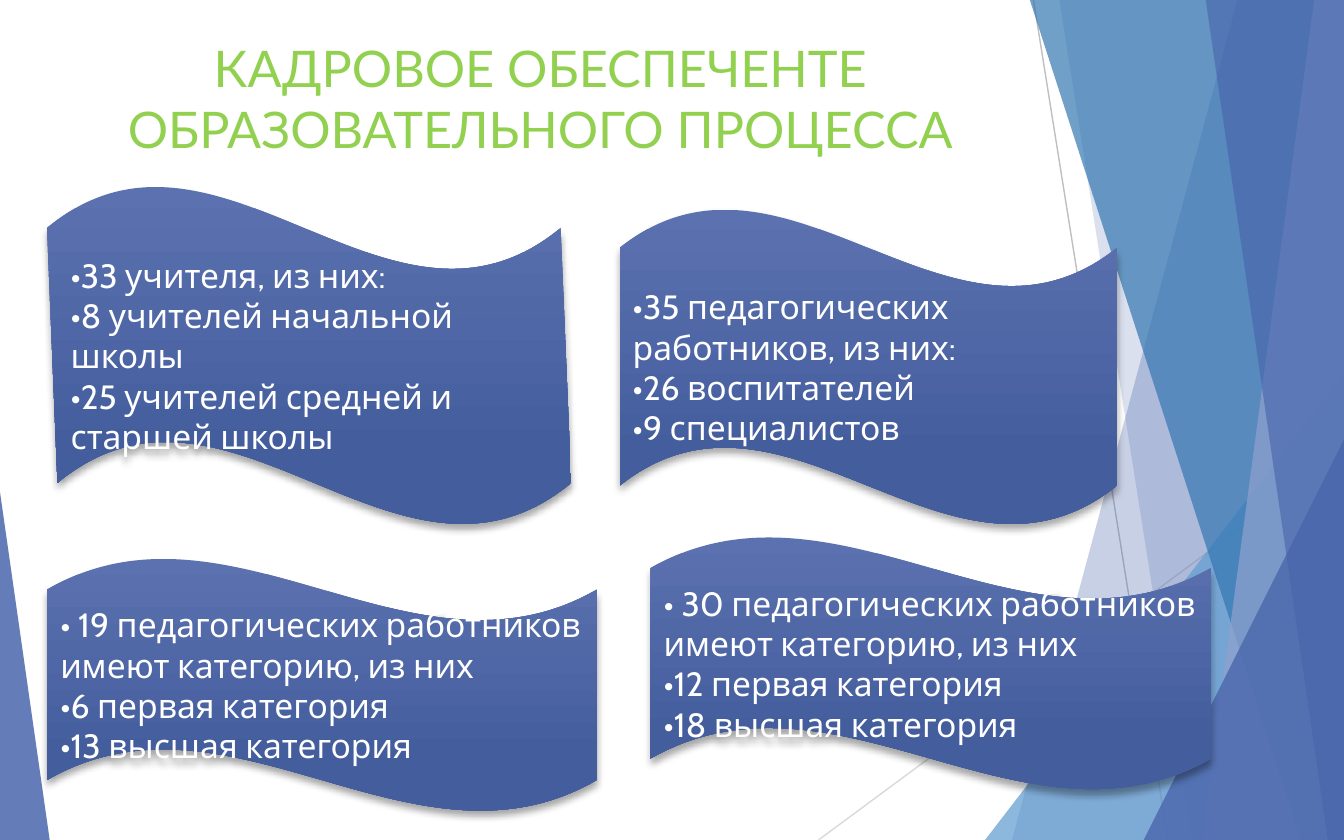
from lxml import etree
from pptx import Presentation
from pptx import util as u
from pptx.dml.color import RGBColor
from pptx.enum import shapes, text
from pptx.oxml.ns import qn

In, Pt = u.Inches, u.Pt


def tint(color, code, alpha=None):
    color.rgb = RGBColor.from_string(code)
    if alpha is not None:
        node = color._xFill.find(qn("a:srgbClr"))
        etree.SubElement(node, qn("a:alpha"), val=str(alpha * 1000))


def style(item, values):
    for key, val in values.items():
        setattr(item, key, val)


deck = Presentation()
style(deck, {"slide_width": In(10), "slide_height": In(6.25)})
slide = deck.slides.add_slide(deck.slide_layouts[5])
tree = slide.shapes

rays = [
    (7.69, 0, 8.69, 6.25, "BFBFBF"),
    (10, 3.36, 6.09, 6.25, "D9D9D9"),
]
for x1, y1, x2, y2, code in rays:
    ray = tree.add_connector(
        shapes.MSO_CONNECTOR.STRAIGHT, In(x1), In(y1), In(x2), In(y2))
    ray.line.width = Pt(0.75)
    tint(ray.line.color, code)
    etree.SubElement(ray._element.spPr, qn("a:effectLst"))

# Bands give top and bottom x; peaks give box and apex.
panes = [
    ("band", (9.21, 7.53), "4A66AC", 30),
    ("band", (7.88, 8.87), "4A66AC", 20),
    ("peak", (7.33, 2.78, 2.67, 3.47, 1), "629DD1", 72),
    ("band", (7.66, 9.68), "3477B2", 70),
    ("band", (9.78, 8.94), "90A2CF", 70),
    ("band", (8.97, 9.88), "4A66AC", 65),
    ("peak", (8.51, 3.27, 1.49, 2.98, 1), "4A66AC", 80),
    ("peak", (0, 3.66, 0.37, 2.59, 0), "4A66AC", 85),
]
for kind, spot, code, alpha in panes:
    if kind == "band":
        top, base = spot
        form = tree.build_freeform(In(top), In(-0.01))
        form.add_line_segments(
            [(In(10), In(-0.01)), (In(10), In(6.25)), (In(base), In(6.25))])
        pane = form.convert_to_shape()
    else:
        pane = tree.add_shape(
            shapes.MSO_SHAPE.ISOSCELES_TRIANGLE, *map(In, spot[:4]))
        pane.adjustments[0] = spot[4]
    pane.shadow.inherit = False
    pane.line.fill.background()
    pane.fill.solid()
    tint(pane.fill.fore_color, code, alpha)

title = tree.title
style(title, {"left": In(0.28), "top": In(0.21),
              "width": In(7.48), "height": In(1.04)})
frame = title.text_frame
frame.text = "КАДРОВОЕ ОБЕСПЕЧЕНТЕ ОБРАЗОВАТЕЛЬНОГО ПРОЦЕССА"
style(frame, {"word_wrap": True, "vertical_anchor": text.MSO_ANCHOR.MIDDLE})
head = frame.paragraphs[0]
head.alignment = text.PP_ALIGN.CENTER
style(head.font, {"name": "Lato", "size": Pt(27)})
tint(head.font.color, "92D050")

waves = [
    ((0.35, 1.38, 3.9, 2.53), 0.01,
     ["•33 учителя, из них:", "•8 учителей начальной школы",
      "•25 учителей средней и старшей школы"]),
    ((4.61, 1.55, 3.7, 2.36), 0,
     ["•35 педагогических работников, из них:", "•26 воспитателей",
      "•9 специалистов"]),
    ((0.35, 4.15, 4.09, 1.89), 0,
     ["• 19 педагогических работников имеют категорию, из них",
      "•6 первая категория", "•13 высшая категория"]),
    ((4.84, 3.99, 4.17, 1.89), 0,
     ["• 30 педагогических работников имеют категорию, из них",
      "•12 первая категория", "•18 высшая категория"]),
]
for box, skew, lines in waves:
    wave = tree.add_shape(shapes.MSO_SHAPE.WAVE, *map(In, box))
    wave.adjustments[0] = 0.125
    wave.adjustments[1] = skew
    wave.line.fill.background()
    wave.fill.gradient()
    wave.fill.gradient_angle = 270
    stops = zip(wave.fill.gradient_stops, (0, 0.78), ("5C72B0", "445D9D"))
    for stop, place, code in stops:
        stop.position = place
        tint(stop.color, code)
    wave.shadow.inherit = False
    glow = etree.SubElement(
        wave._element.spPr.find(qn("a:effectLst")), qn("a:outerShdw"),
        blurRad=str(Pt(4)), dist=str(Pt(3)), dir="5400000", rotWithShape="0")
    shade = etree.SubElement(glow, qn("a:srgbClr"), val="000000")
    etree.SubElement(shade, qn("a:alpha"), val="35000")
    frame = wave.text_frame
    frame.text = "\n".join(lines)
    style(frame, {"word_wrap": True,
                  "vertical_anchor": text.MSO_ANCHOR.MIDDLE})
    for para in frame.paragraphs:
        para.alignment = text.PP_ALIGN.LEFT
        style(para.font, {"name": "Cabin", "size": Pt(18)})
        tint(para.font.color, "FFFFFF")

deck.save("out.pptx")
